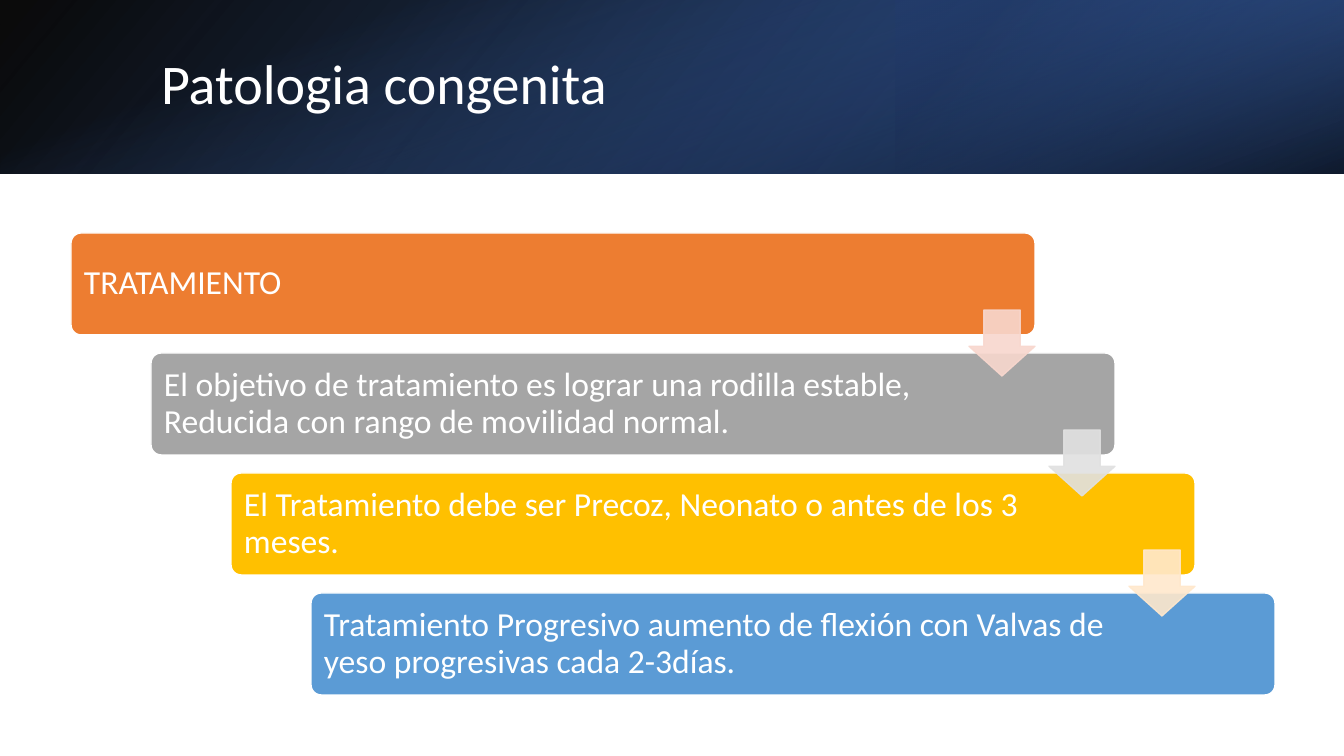
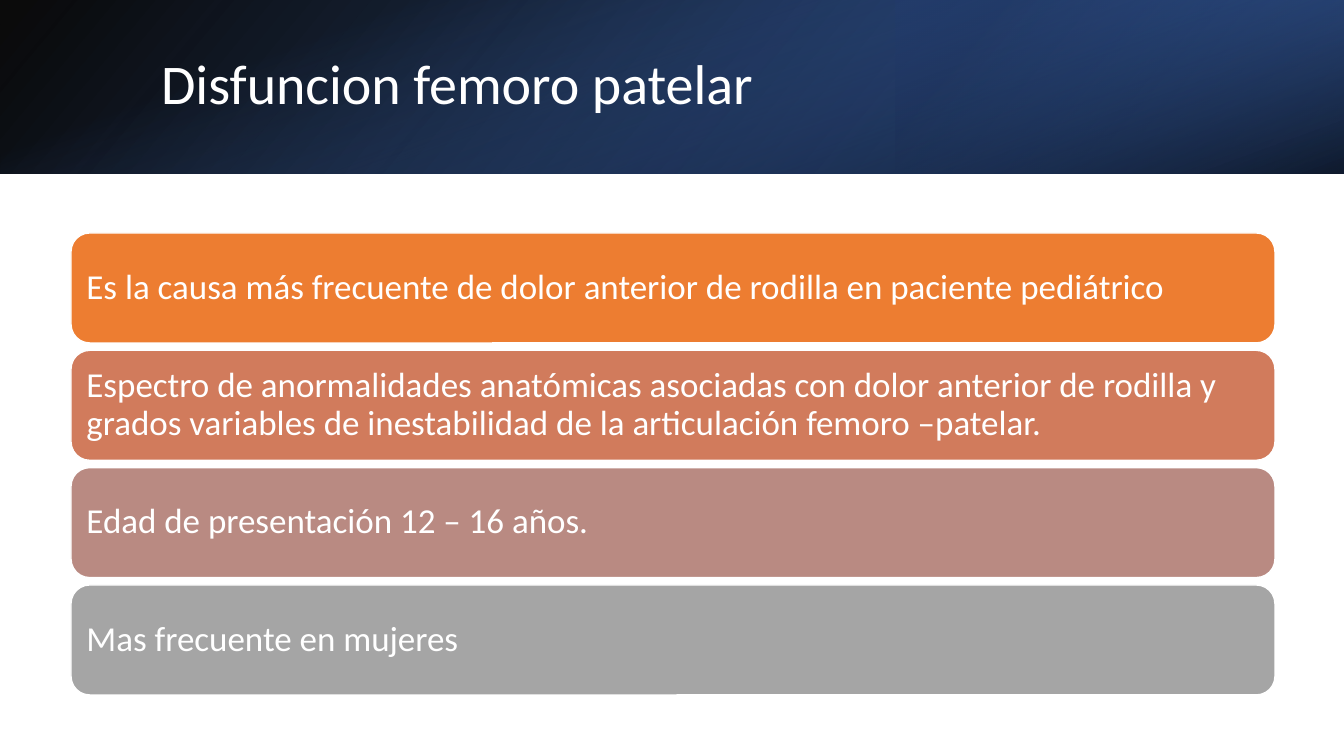
from pptx import Presentation
from pptx.dml.color import RGBColor
from pptx.enum.shapes import MSO_SHAPE
from pptx.enum.text import MSO_ANCHOR, MSO_AUTO_SIZE, PP_ALIGN
from pptx.oxml import parse_xml
from pptx.oxml.ns import nsdecls, qn
from pptx.util import Emu, Pt

EMU_PER_PX = 914400 / 100.8
PAGE_WIDTH, PAGE_HEIGHT = 1344, 756
BAND_HEIGHT = 174
TITLE_BOX = (151, 38, 1107, 97)
AREA_LEFT, AREA_TOP, AREA_WIDTH, AREA_HEIGHT = 71, 233, 1204, 462
ARROW_SIZE, ARROW_DROP = 66, 77
CARD_MARGIN, STAIR_MARGIN = 10, 156
FONT = "Calibri"

COLORS = {
    "white": "FFFFFF",
    "black": "000000",
    "navy": "203864",
    "deep blue": "2F5597",
    "blue": "4472C4",
    "orange": "ED7D31",
    "gray": "A5A5A5",
    "gold": "FFC000",
    "sky": "5B9BD5",
    "terracotta": "D17B5C",
    "rose": "B98A82",
    "pale orange": "F8D7CE",
    "pale gray": "E1E1E1",
    "pale gold": "FFE8CC",
}

BANDS = [
    {"box": (0, 0, PAGE_WIDTH, BAND_HEIGHT), "rotation": 0, "flip": True, "angle": 140,
     "stops": [(0, "black", 96), (100, "deep blue", 100)]},
    {"box": (896, 0, 448, BAND_HEIGHT), "rotation": 180, "flip": True, "angle": 320,
     "stops": [(19, "navy", 68), (100, "blue", 79)]},
    {"box": ((PAGE_WIDTH - BAND_HEIGHT) / 2, (BAND_HEIGHT - PAGE_WIDTH) / 2,
             BAND_HEIGHT, PAGE_WIDTH), "rotation": 90, "flip": False, "angle": 340,
     "stops": [(23, "blue", 0), (99, "black", 74)]},
]

PAGES = [
    {
        "title": "Patologia congenita",
        "card": (964, 102), "corner": 0.1, "size": 24, "margin": STAIR_MARGIN,
        "cards": [
            ("TRATAMIENTO", "orange"),
            ("El objetivo de tratamiento es lograr una rodilla estable, "
             "Reducida con rango de movilidad normal.", "gray"),
            ("El Tratamiento debe ser Precoz, Neonato o antes de los 3 meses.", "gold"),
            ("Tratamiento Progresivo aumento de flexión con Valvas de yeso "
             "progresivas cada 2-3días.", "sky"),
        ],
        "arrows": ["pale orange", "pale gray", "pale gold"],
    },
    {
        "title": "Disfuncion femoro patelar",
        "card": (AREA_WIDTH, 110), "corner": 0.17, "size": 25, "margin": CARD_MARGIN,
        "cards": [
            ("Es la causa más frecuente de dolor anterior de rodilla en paciente pediátrico",
             "orange"),
            ("Espectro de anormalidades anatómicas asociadas con dolor anterior de rodilla y "
             "grados variables de inestabilidad de la articulación femoro –patelar.",
             "terracotta"),
            ("Edad de presentación 12 – 16 años.", "rose"),
            ("Mas frecuente en mujeres", "gray"),
        ],
        "arrows": [],
    },
]


def px(value):
    return Emu(round(value * EMU_PER_PX))


def color(name):
    return RGBColor.from_string(COLORS[name])


def add_shape(page, kind, box, adjustments=()):
    shape = page.shapes.add_shape(kind, *map(px, box))
    shape.shadow.inherit = False
    for index, value in enumerate(adjustments):
        shape.adjustments[index] = value
    return shape


def paint(shape, fill, line):
    shape.fill.solid()
    shape.fill.fore_color.rgb = color(fill)
    shape.line.color.rgb = color(line)
    shape.line.width = Pt(1)


def write(shape, text, size):
    frame = shape.text_frame
    frame.word_wrap = True
    frame.auto_size = MSO_AUTO_SIZE.NONE
    frame.vertical_anchor = MSO_ANCHOR.MIDDLE
    para = frame.paragraphs[0]
    para.alignment = PP_ALIGN.LEFT
    para.line_spacing = 0.9
    span = para.add_run()
    span.text = text
    span.font.name = FONT
    span.font.size = Pt(size)
    span.font.color.rgb = color("white")
    return frame


def add_band(page, band):
    shape = add_shape(page, MSO_SHAPE.RECTANGLE, band["box"])
    shape.rotation = band["rotation"]
    shape.line.fill.background()
    properties = shape.element.spPr
    if band["flip"]:
        properties.find(qn("a:xfrm")).set("flipH", "1")
    stops = "".join(
        f'<a:gs pos="{place * 1000}"><a:srgbClr val="{COLORS[name]}">'
        f'<a:alpha val="{alpha * 1000}"/></a:srgbClr></a:gs>'
        for place, name, alpha in band["stops"])
    gradient = parse_xml(
        f'<a:gradFill {nsdecls("a")}><a:gsLst>{stops}</a:gsLst>'
        f'<a:lin ang="{band["angle"] * 60000}" scaled="0"/></a:gradFill>')
    properties.find(qn("a:prstGeom")).addnext(gradient)
    page.shapes.title.element.addprevious(shape.element)


def add_header(page, text):
    title = page.shapes.title
    title.left, title.top, title.width, title.height = map(px, TITLE_BOX)
    write(title, text, 40)
    for band in BANDS:
        add_band(page, band)


def add_card(page, box, text, fill, content):
    card = add_shape(page, MSO_SHAPE.ROUNDED_RECTANGLE, box, [content["corner"]])
    paint(card, fill, "white")
    frame = write(card, text, content["size"])
    frame.margin_left = frame.margin_top = frame.margin_bottom = px(CARD_MARGIN)
    frame.margin_right = px(content["margin"])


def add_arrow(page, left, top, name):
    arrow = add_shape(page, MSO_SHAPE.DOWN_ARROW,
                      (left, top, ARROW_SIZE, ARROW_SIZE), [0.55, 0.45])
    paint(arrow, name, name)
    for tint in arrow.element.spPr.iter(qn("a:srgbClr")):
        tint.append(parse_xml(f'<a:alpha {nsdecls("a")} val="90000"/>'))


def add_page(deck, content):
    page = deck.slides.add_slide(deck.slide_layouts[5])
    add_header(page, content["title"])
    width, height = content["card"]
    gaps = len(content["cards"]) - 1
    step_x = (AREA_WIDTH - width) / gaps
    step_y = (AREA_HEIGHT - height) / gaps
    corners = [(AREA_LEFT + index * step_x, AREA_TOP + index * step_y)
               for index in range(gaps + 1)]
    for (left, top), (text, fill) in zip(corners, content["cards"]):
        add_card(page, (left, top, width, height), text, fill, content)
    for (left, top), name in zip(corners, content["arrows"]):
        add_arrow(page, left + width - ARROW_SIZE, top + ARROW_DROP, name)


def main():
    deck = Presentation()
    deck.slide_width, deck.slide_height = px(PAGE_WIDTH), px(PAGE_HEIGHT)
    for content in PAGES:
        add_page(deck, content)
    deck.save("out.pptx")


if __name__ == "__main__":
    main()
